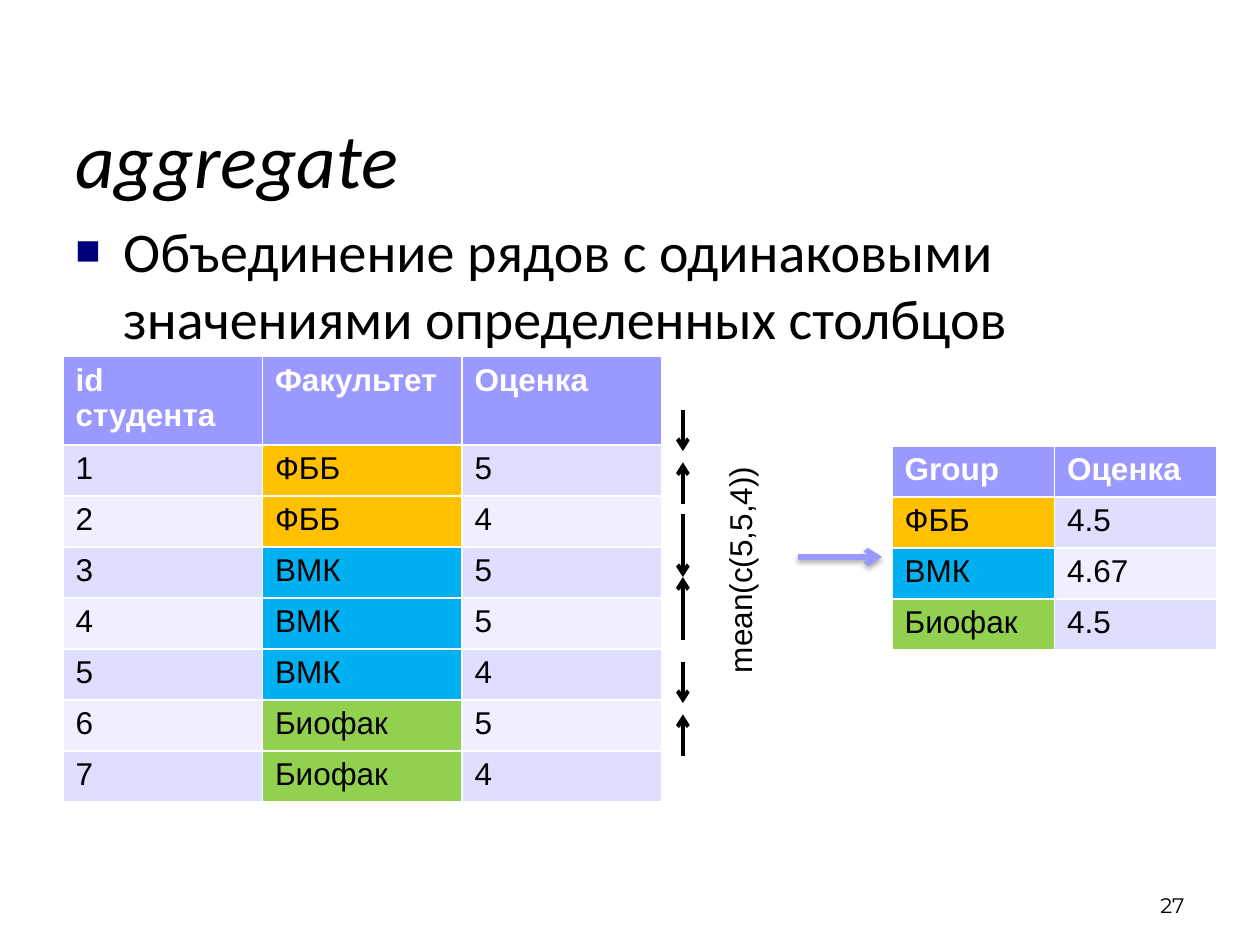
from lxml.etree import SubElement
from pptx import Presentation
from pptx.dml.color import RGBColor
from pptx.enum.shapes import MSO_CONNECTOR
from pptx.enum.text import MSO_ANCHOR, PP_ALIGN
from pptx.oxml.ns import qn
from pptx.util import Inches, Pt

BLACK = RGBColor(0x00, 0x00, 0x00)
WHITE = RGBColor(0xFF, 0xFF, 0xFF)
NAVY = RGBColor(0x00, 0x00, 0x7D)
VIOLET = RGBColor(0x99, 0x99, 0xFF)
BANDS = [RGBColor(0xDE, 0xDE, 0xFF), RGBColor(0xEF, 0xEF, 0xFF)]
FACULTY_COLORS = {
    "ФББ": RGBColor(0xFF, 0xC0, 0x00),
    "ВМК": RGBColor(0x00, 0xB0, 0xF0),
    "Биофак": RGBColor(0x92, 0xD0, 0x50),
}
STUDENTS = [
    ("id студента", "Факультет", "Оценка"),
    ("1", "ФББ", "5"),
    ("2", "ФББ", "4"),
    ("3", "ВМК", "5"),
    ("4", "ВМК", "5"),
    ("5", "ВМК", "4"),
    ("6", "Биофак", "5"),
    ("7", "Биофак", "4"),
]
MEANS = [("Group", "Оценка"), ("ФББ", "4.5"), ("ВМК", "4.67"), ("Биофак", "4.5")]
ROW_HEIGHT = 0.405
GROUP_SPANS = [(3.25, 3.58, 3.67, 4), (4.08, 4.58, 4.58, 5.08), (5.25, 5.58, 5.67, 6)]


def write(para, text, size=18, font="Arial", color=BLACK, bold=False, italic=False):
    """Add formatted text to a paragraph."""
    span = para.add_run()
    span.text = text
    span.font.size = Pt(size)
    span.font.name = font
    span.font.color.rgb = color
    span.font.bold = bold
    span.font.italic = italic


def add_text(page, box, text, anchor=MSO_ANCHOR.TOP, align=PP_ALIGN.LEFT, wrap=True, turn=0, **style):
    """Place a text box and return it."""
    shape = page.shapes.add_textbox(*map(Inches, box))
    shape.rotation = turn
    frame = shape.text_frame
    frame.word_wrap = wrap
    frame.vertical_anchor = anchor
    para = frame.paragraphs[0]
    para.alignment = align
    write(para, text, **style)
    return shape


def add_bullet(page, box, text):
    """Place a paragraph with a square bullet and a hanging indent."""
    shape = add_text(page, box, text, size=32, font="Calibri")
    para = shape.text_frame.paragraphs[0]
    para.space_before = Pt(6.4)
    props = para._p.get_or_add_pPr()
    props.set("marL", str(Inches(0.38)))
    props.set("indent", str(Inches(-0.38)))
    color = SubElement(props, qn("a:buClr"))
    SubElement(color, qn("a:srgbClr"), val=str(NAVY))
    SubElement(props, qn("a:buSzPct"), val="75000")
    SubElement(props, qn("a:buFont"), typeface="Arial")
    SubElement(props, qn("a:buChar"), char="■")


def add_grid(page, left, top, width, rows):
    """Place a table whose faculty cells carry the colour of their group."""
    box = map(Inches, (left, top, width, ROW_HEIGHT * len(rows)))
    table = page.shapes.add_table(len(rows), len(rows[0]), *box).table
    for row, values in enumerate(rows):
        for column, value in enumerate(values):
            cell = table.cell(row, column)
            header = row == 0
            band = VIOLET if header else BANDS[(row - 1) % 2]
            cell.fill.solid()
            cell.fill.fore_color.rgb = FACULTY_COLORS.get(value, band)
            para = cell.text_frame.paragraphs[0]
            write(para, value, color=WHITE if header else BLACK, bold=header)


def add_arrow(page, start, end, color=BLACK, width=2.25, shadow=False):
    """Draw an arrow between two points, with an optional soft shadow."""
    ends = map(Inches, (*start, *end))
    arrow = page.shapes.add_connector(MSO_CONNECTOR.STRAIGHT, *ends)
    arrow.line.color.rgb = color
    arrow.line.width = Pt(width)
    SubElement(arrow.line._get_or_add_ln(), qn("a:tailEnd"), type="arrow")
    effects = SubElement(arrow._element.spPr, qn("a:effectLst"))
    if shadow:
        outer = SubElement(effects, qn("a:outerShdw"), blurRad=str(Pt(3.1)),
                           dist=str(Pt(1.8)), dir="5400000", rotWithShape="0")
        shade = SubElement(outer, qn("a:srgbClr"), val=str(BLACK))
        SubElement(shade, qn("a:alpha"), val="35000")


def add_group_arrows(page, x):
    """Draw a pair of facing arrows beside each group of rows."""
    for upper_start, upper_end, lower_end, lower_start in GROUP_SPANS:
        add_arrow(page, (x, upper_start), (x, upper_end))
        add_arrow(page, (x, lower_start), (x, lower_end))


def build_slide(page):
    """Place every part of the aggregate slide."""
    add_text(page, (0.5, 0.5, 9, 1.5), "aggregate", anchor=MSO_ANCHOR.MIDDLE,
             size=44, font="Calibri", italic=True)
    add_bullet(page, (0.5, 1.67, 9, 1.33),
               "Объединение рядов с одинаковыми значениями определенных столбцов")
    add_grid(page, 0.5, 2.83, 4.75, STUDENTS)
    add_grid(page, 7.08, 3.54, 2.58, MEANS)
    add_arrow(page, (6.33, 4.42), (7, 4.42), color=VIOLET, width=3, shadow=True)
    add_group_arrows(page, 5.42)
    add_text(page, (4.94, 4.31, 1.86, 0.4), "mean(c(5,5,4))", wrap=False, turn=270)
    add_text(page, (7.17, 6.83, 2.33, 0.5), "27", anchor=MSO_ANCHOR.BOTTOM,
             align=PP_ALIGN.RIGHT, size=12, font="Montserrat")


def main():
    """Build and save the deck."""
    deck = Presentation()
    deck.slide_width = Inches(10)
    deck.slide_height = Inches(7.5)
    build_slide(deck.slides.add_slide(deck.slide_layouts[6]))
    deck.save("out.pptx")


if __name__ == "__main__":
    main()
